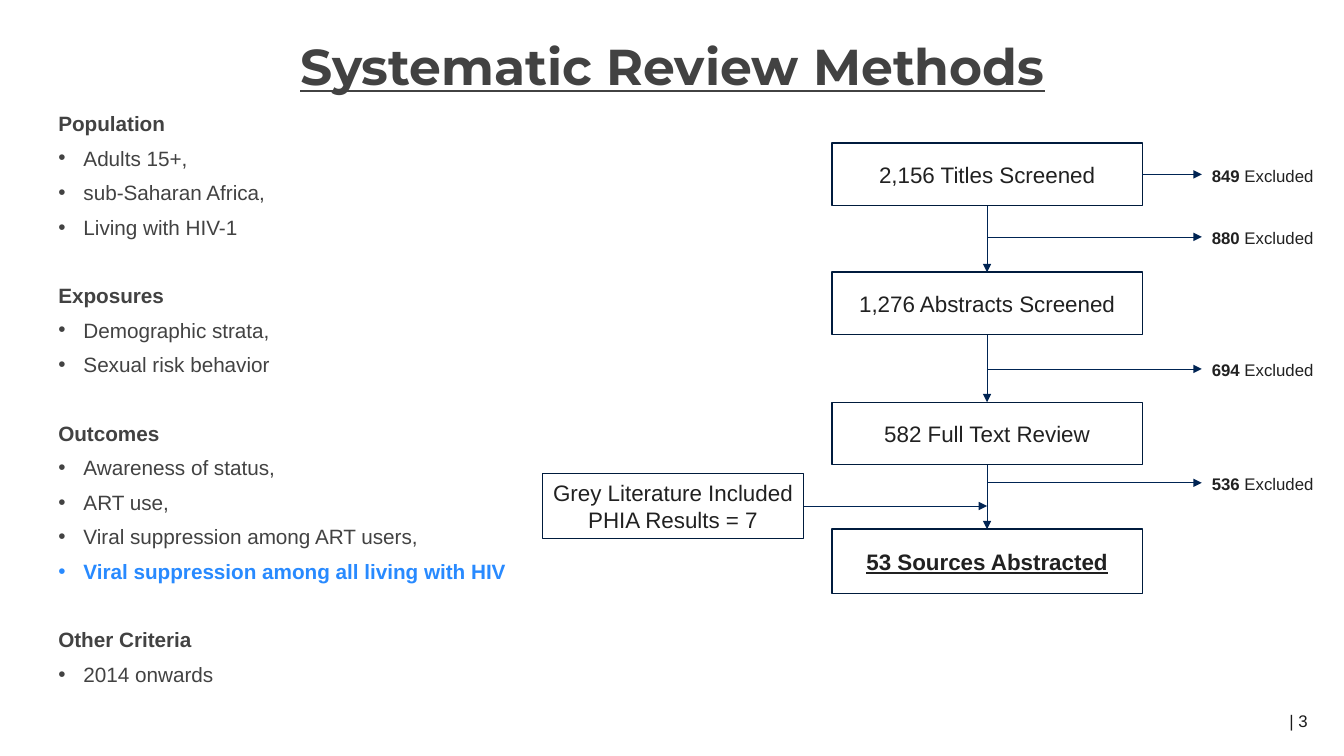
from dataclasses import dataclass

from lxml import etree
from pptx import Presentation
from pptx.dml.color import RGBColor
from pptx.enum.shapes import MSO_CONNECTOR, MSO_SHAPE
from pptx.enum.text import MSO_ANCHOR, MSO_AUTO_SIZE, PP_ALIGN
from pptx.oxml.ns import qn
from pptx.util import Emu, Pt

PX = 9144
RECTANGLE = MSO_SHAPE.RECTANGLE
STRAIGHT = MSO_CONNECTOR.STRAIGHT
TOP, MIDDLE = MSO_ANCHOR.TOP, MSO_ANCHOR.MIDDLE
LEFT, CENTER, RIGHT = PP_ALIGN.LEFT, PP_ALIGN.CENTER, PP_ALIGN.RIGHT
SIDE_TOP, SIDE_BOTTOM, SIDE_RIGHT = 0, 2, 3


@dataclass(frozen=True)
class Theme:
    heading_font: str = "Montserrat"
    body_font: str = "Arial"
    title_size: float = 36
    box_size: float = 16
    criteria_size: float = 14.8
    label_size: float = 12
    heading: str = "424242"
    text: str = "212121"
    page: str = "1A1A1A"
    highlight: str = "288AFF"
    fill: str = "FFFFFF"
    border: str = "001B3D"
    arrow: str = "002453"


def px(*lengths):
    return [Emu(length * PX) for length in lengths]


def rgb(value):
    return RGBColor.from_string(value)


class SlideBuilder:
    def __init__(self, slide, theme):
        self.slide = slide
        self.theme = theme

    def style(self, paragraph, size, color, bold=False, underline=False, name=None):
        font = paragraph.font
        font.name = name or self.theme.body_font
        font.size = Pt(size)
        font.color.rgb = rgb(color)
        font.bold = bold
        font.underline = underline

    def title(self, text, left, top, width, height):
        title = self.slide.shapes.title
        title.left, title.top, title.width, title.height = px(left, top, width, height)
        frame = title.text_frame
        frame.text = text
        frame.auto_size = MSO_AUTO_SIZE.NONE
        frame.vertical_anchor = TOP
        heading = frame.paragraphs[0]
        heading.alignment = CENTER
        heading.line_spacing = 0.9
        self.style(heading, self.theme.title_size, self.theme.heading, True, True,
                   self.theme.heading_font)

    def text_frame(self, left, top, width, height, anchor=MIDDLE):
        frame = self.slide.shapes.add_textbox(*px(left, top, width, height)).text_frame
        frame.word_wrap = True
        frame.vertical_anchor = anchor
        return frame

    def label(self, strong, plain, left, top, width, height, color, align=LEFT):
        paragraph = self.text_frame(left, top, width, height).paragraphs[0]
        paragraph.alignment = align
        self.style(paragraph, self.theme.label_size, color)
        if strong:
            count = paragraph.add_run()
            count.text = strong
            count.font.bold = True
        paragraph.add_run().text = plain

    def box(self, text, left, top, width, height, emphasis=False):
        box = self.slide.shapes.add_shape(RECTANGLE, *px(left, top, width, height))
        box.shadow.inherit = False
        box.fill.solid()
        box.fill.fore_color.rgb = rgb(self.theme.fill)
        box.line.color.rgb = rgb(self.theme.border)
        box.line.width = Pt(1)
        frame = box.text_frame
        frame.text = text
        frame.word_wrap = True
        frame.vertical_anchor = MIDDLE
        frame.margin_left, frame.margin_right = px(5, 5)
        for paragraph in frame.paragraphs:
            paragraph.alignment = CENTER
            self.style(paragraph, self.theme.box_size, self.theme.text, emphasis, emphasis)
        return box

    def arrow(self, x1, y1, x2, y2, start=None, end=None):
        arrow = self.slide.shapes.add_connector(STRAIGHT, *px(x1, y1, x2, y2))
        if start:
            arrow.begin_connect(*start)
        if end:
            arrow.end_connect(*end)
        arrow.line.color.rgb = rgb(self.theme.arrow)
        arrow.line.width = Pt(0.5)
        etree.SubElement(arrow.line._get_or_add_ln(), qn("a:tailEnd"), type="triangle")
        etree.SubElement(arrow._element.spPr, qn("a:effectLst"))

    def criteria(self, groups, highlighted, left, top, width, height):
        frame = self.text_frame(left, top, width, height, TOP)
        for position, (heading, items) in enumerate(groups):
            paragraph = frame.add_paragraph() if position else frame.paragraphs[0]
            paragraph.text = heading
            paragraph.line_spacing = 0.83
            if position:
                paragraph.space_before = Pt(34)
            self.style(paragraph, self.theme.criteria_size, self.theme.heading, True)
            for item in items:
                self.bullet(frame.add_paragraph(), item, item == highlighted)

    def bullet(self, paragraph, text, highlighted):
        paragraph.text = text
        paragraph.line_spacing = 0.83
        paragraph.space_before = Pt(10)
        properties = paragraph._p.get_or_add_pPr()
        properties.set("marL", str(25 * PX))
        properties.set("indent", str(-25 * PX))
        etree.SubElement(properties, qn("a:buFont"), typeface=self.theme.body_font)
        etree.SubElement(properties, qn("a:buChar"), char="•")
        color = self.theme.highlight if highlighted else self.theme.heading
        self.style(paragraph, self.theme.criteria_size, color, highlighted)


CRITERIA = [
    ("Population", ["Adults 15+,", "sub-Saharan Africa,", "Living with HIV-1"]),
    ("Exposures", ["Demographic strata,", "Sexual risk behavior"]),
    ("Outcomes", ["Awareness of status,", "ART use,", "Viral suppression among ART users,",
                  "Viral suppression among all living with HIV"]),
    ("Other Criteria", ["2014 onwards"]),
]
STAGES = [
    ("2,156 Titles Screened", 142, 62),
    ("1,276 Abstracts Screened", 270, 62),
    ("582 Full Text Review", 399, 62),
    ("53 Sources Abstracted", 525, 64),
]
EXCLUSIONS = [("849", 173), ("880", 235), ("694", 366), ("536", 479)]
STAGE_LEFT, STAGE_WIDTH = 825, 308
FLOW_X = STAGE_LEFT + STAGE_WIDTH // 2
EXCLUDED_X = 1192


def main():
    presentation = Presentation()
    presentation.slide_width, presentation.slide_height = px(1333, 750)
    theme = Theme()
    builder = SlideBuilder(presentation.slides.add_slide(presentation.slide_layouts[5]), theme)

    builder.title("Systematic Review Methods", 72, 37, 1190, 71)
    builder.criteria(CRITERIA, CRITERIA[2][1][-1], 48, 109, 640, 602)

    stages = [builder.box(text, STAGE_LEFT, top, STAGE_WIDTH, height, text == STAGES[-1][0])
              for text, top, height in STAGES]
    for index, (upper, lower) in enumerate(zip(stages, stages[1:])):
        _, top, height = STAGES[index]
        builder.arrow(FLOW_X, top + height, FLOW_X, STAGES[index + 1][1],
                      (upper, SIDE_BOTTOM), (lower, SIDE_TOP))

    for index, (count, y) in enumerate(EXCLUSIONS):
        start = None if index else (stages[0], SIDE_RIGHT)
        builder.arrow(FLOW_X, y, EXCLUDED_X, y, start)
        builder.label(count, " Excluded", EXCLUDED_X, y - 31, 141, 64, theme.text)

    grey_literature = builder.box("Grey Literature Included\nPHIA Results = 7", 538, 470, 259, 64)
    builder.arrow(797, 502, FLOW_X, 502, (grey_literature, SIDE_RIGHT))
    builder.label("", "| 3", 1007, 695, 300, 40, theme.page, RIGHT)

    presentation.save("out.pptx")


if __name__ == "__main__":
    main()
